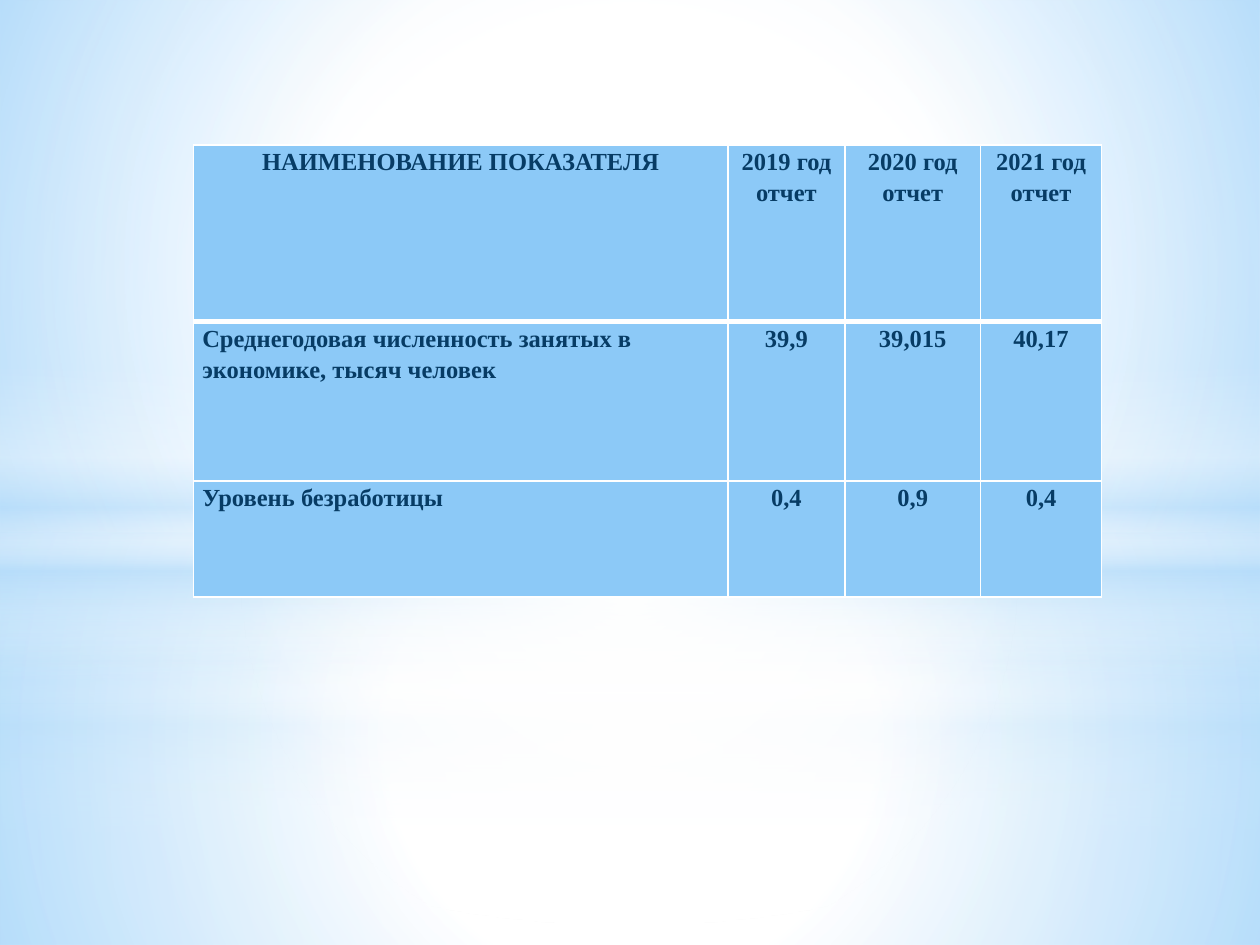
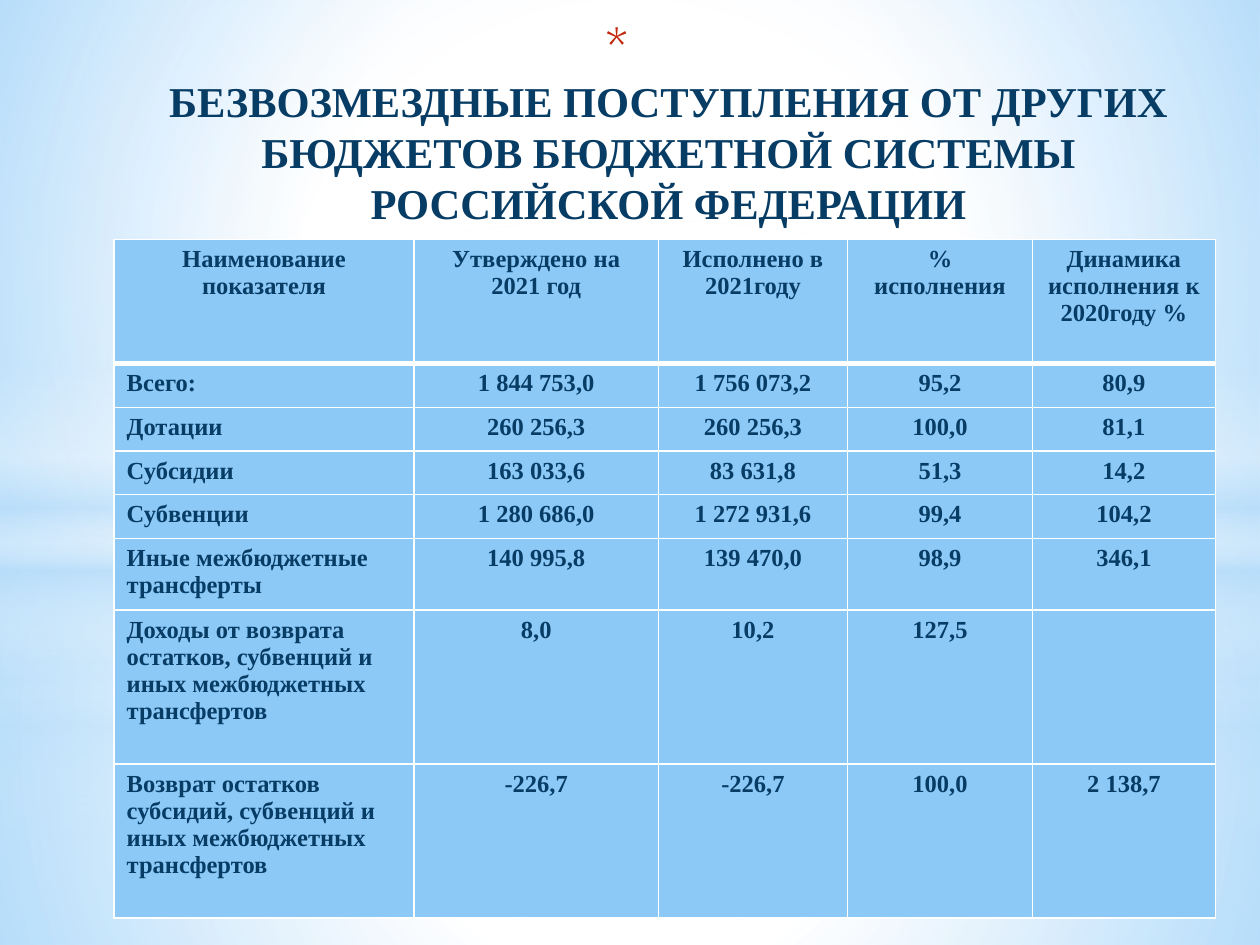
from lxml import etree
from pptx import Presentation
from pptx.dml.color import RGBColor
from pptx.enum import shapes, text
from pptx.oxml import ns
from pptx.util import Pt

COLORS = {
    "white": "FFFFFF",
    "sky": "B4DCFA",
    "cell": "8CC9F7",
    "navy": "073C65",
    "bullet": "C3260C",
}
SERIF = "Times New Roman"
PAGE_WIDTH, PAGE_HEIGHT = 720, 540

# Gradient stops: position, colour name, opacity (all in percent)
FLOOR_STOPS = [(0, "white", 91), (37, "white", 76), (100, "sky", 79)]
SKY_STOPS = [(0, "white", 89), (48, "white", 62), (100, "sky", 79)]
BAND_STOPS = [(0, "white", 0), (29, "white", 30), (45, "sky", 40),
              (55, "white", 26), (65, "sky", 60), (100, "white", 0)]

# Horizon, band top and glow reach of the two stacked backdrop layers
BACKDROP_LAYERS = [(401.8, 296.6, 56), (304.6, 208.8, 54)]

EMPLOYMENT = [
    ["НАИМЕНОВАНИЕ ПОКАЗАТЕЛЯ", "2019 год отчет", "2020 год отчет", "2021 год отчет"],
    ["Среднегодовая численность занятых в экономике, тысяч человек",
     "39,9", "39,015", "40,17"],
    ["Уровень безработицы", "0,4", "0,9", "0,4"],
]

TRANSFERS_TITLE = ("БЕЗВОЗМЕЗДНЫЕ ПОСТУПЛЕНИЯ ОТ ДРУГИХ БЮДЖЕТОВ "
                   "БЮДЖЕТНОЙ СИСТЕМЫ РОССИЙСКОЙ ФЕДЕРАЦИИ")
TRANSFERS = [
    ["Наименование показателя", "Утверждено на 2021 год", "Исполнено в 2021году",
     "% исполнения", "Динамика исполнения к 2020году %"],
    ["Всего:", "1 844 753,0", "1 756 073,2", "95,2", "80,9"],
    ["Дотации", "260 256,3", "260 256,3", "100,0", "81,1"],
    ["Субсидии", "163 033,6", "83 631,8", "51,3", "14,2"],
    ["Субвенции", "1 280 686,0", "1 272 931,6", "99,4", "104,2"],
    ["Иные межбюджетные трансферты", "140 995,8", "139 470,0", "98,9", "346,1"],
    ["Доходы от возврата остатков, субвенций и иных межбюджетных трансфертов",
     "8,0", "10,2", "127,5", ""],
    ["Возврат остатков субсидий, субвенций и иных межбюджетных трансфертов",
     "-226,7", "-226,7", "100,0", "2 138,7"],
]


def add_element(parent, tag, **attributes):
    element = etree.SubElement(parent, ns.qn(tag))
    for name, value in attributes.items():
        element.set(name, str(value))
    return element


def set_gradient(shape, stops, angle=None):
    """Fill with translucent stops: linear at an angle, else from the centre out."""
    shape.fill.background()
    properties = shape.element.spPr
    gradient = etree.Element(ns.qn("a:gradFill"), rotWithShape="1")
    stop_list = add_element(gradient, "a:gsLst")
    for position, color, opacity in stops:
        stop = add_element(stop_list, "a:gs", pos=position * 1000)
        value = add_element(stop, "a:srgbClr", val=COLORS[color])
        add_element(value, "a:alpha", val=opacity * 1000)
    if angle is None:
        route = add_element(gradient, "a:path", path="circle")
        add_element(route, "a:fillToRect", l=50000, t=50000, r=50000, b=50000)
    else:
        add_element(gradient, "a:lin", ang=angle * 60000, scaled=0)
    properties.replace(properties.find(ns.qn("a:noFill")), gradient)


def add_haze(page, kind, top, height, stops, angle=None):
    """Add a full-width gradient shape without an outline."""
    shape = page.shapes.add_shape(kind, 0, Pt(top), Pt(PAGE_WIDTH), Pt(height))
    shape.shadow.inherit = False
    set_gradient(shape, stops, angle)
    shape.line.fill.background()


def add_backdrop(page):
    rectangle, oval = shapes.MSO_SHAPE.RECTANGLE, shapes.MSO_SHAPE.OVAL
    for horizon, band_top, glow_reach in BACKDROP_LAYERS:
        add_haze(page, rectangle, horizon, PAGE_HEIGHT - horizon, FLOOR_STOPS)
        add_haze(page, rectangle, 0, horizon, SKY_STOPS)
        add_haze(page, rectangle, band_top, 180, BAND_STOPS, angle=90)
        add_haze(page, oval, 126, 401.8, [(0, "white", 100), (glow_reach, "white", 0)])


def add_page(deck):
    page = deck.slides.add_slide(deck.slide_layouts[6])
    page.background.fill.solid()
    page.background.fill.fore_color.rgb = RGBColor.from_string(COLORS["white"])
    add_backdrop(page)
    return page


def style_font(font, size):
    font.name = SERIF
    font.size = Pt(size)
    font.bold = True
    font.color.rgb = RGBColor.from_string(COLORS["navy"])


def add_title(page, title):
    """Add a centred title whose asterisk bullet stands on a line of its own."""
    box = page.shapes.add_textbox(Pt(33), Pt(10), Pt(648), Pt(71))
    box.text_frame.word_wrap = True
    para = box.text_frame.paragraphs[0]
    para.alignment = text.PP_ALIGN.CENTER
    para.line_spacing = 1.0
    properties = para._p.get_or_add_pPr()
    properties.set("marL", str(Pt(50)))
    properties.set("indent", str(Pt(-36)))
    bullet_color = add_element(properties, "a:buClr")
    add_element(bullet_color, "a:srgbClr", val=COLORS["bullet"])
    add_element(properties, "a:buSzPct", val=128000)
    add_element(properties, "a:buFont", typeface="Cabin")
    add_element(properties, "a:buChar", char="*")
    style_font(para.font, 24.3)
    para.add_line_break()
    para.add_run().text = title


def set_borders(cell, top, bottom):
    properties = cell._tc.get_or_add_tcPr()
    for side, width in (("L", 1), ("R", 1), ("T", top), ("B", bottom)):
        line = add_element(properties, f"a:ln{side}", w=Pt(width))
        fill = add_element(line, "a:solidFill")
        add_element(fill, "a:srgbClr", val=COLORS["white"])


def fill_cell(cell, content, centered, line_spacing):
    cell.fill.solid()
    cell.fill.fore_color.rgb = RGBColor.from_string(COLORS["cell"])
    para = cell.text_frame.paragraphs[0]
    para.alignment = text.PP_ALIGN.CENTER if centered else text.PP_ALIGN.LEFT
    para.line_spacing = line_spacing
    style_font(para.font, 14)
    if content:
        para.add_run().text = content


def add_data_table(page, rows, left, top, widths, heights, margins=(7.2, 3.6),
                   line_spacing=1.0):
    """Add a table with a heavy rule under its header; margins are (side, top and bottom)."""
    frame = page.shapes.add_table(len(rows), len(widths), Pt(left), Pt(top),
                                  Pt(sum(widths)), Pt(sum(heights)))
    table = frame.table
    table.first_row = table.horz_banding = False
    for column, width in zip(table.columns, widths):
        column.width = Pt(width)
    for row, height in zip(table.rows, heights):
        row.height = Pt(height)
    for i, values in enumerate(rows):
        for j, content in enumerate(values):
            cell = table.cell(i, j)
            cell.margin_left = cell.margin_right = Pt(margins[0])
            cell.margin_top = cell.margin_bottom = Pt(margins[1])
            set_borders(cell, top=3 if i == 1 else 1, bottom=3 if i == 0 else 1)
            fill_cell(cell, content, i == 0 or j > 0, line_spacing)


def main():
    deck = Presentation()
    deck.slide_width, deck.slide_height = Pt(PAGE_WIDTH), Pt(PAGE_HEIGHT)

    employment_page = add_page(deck)
    add_data_table(employment_page, EMPLOYMENT, 110.6, 82.8,
                   widths=[305.3, 67, 77.4, 69.3], heights=[101, 91, 66.4],
                   margins=(5, 0), line_spacing=1.15)

    transfers_page = add_page(deck)
    add_title(transfers_page, TRANSFERS_TITLE)
    add_data_table(transfers_page, TRANSFERS, 65.2, 136.8,
                   widths=[171.4, 139.7, 108, 105.8, 104.4],
                   heights=[71] + [25] * 4 + [37.5] + [88] * 2)

    deck.save("out.pptx")


if __name__ == "__main__":
    main()
